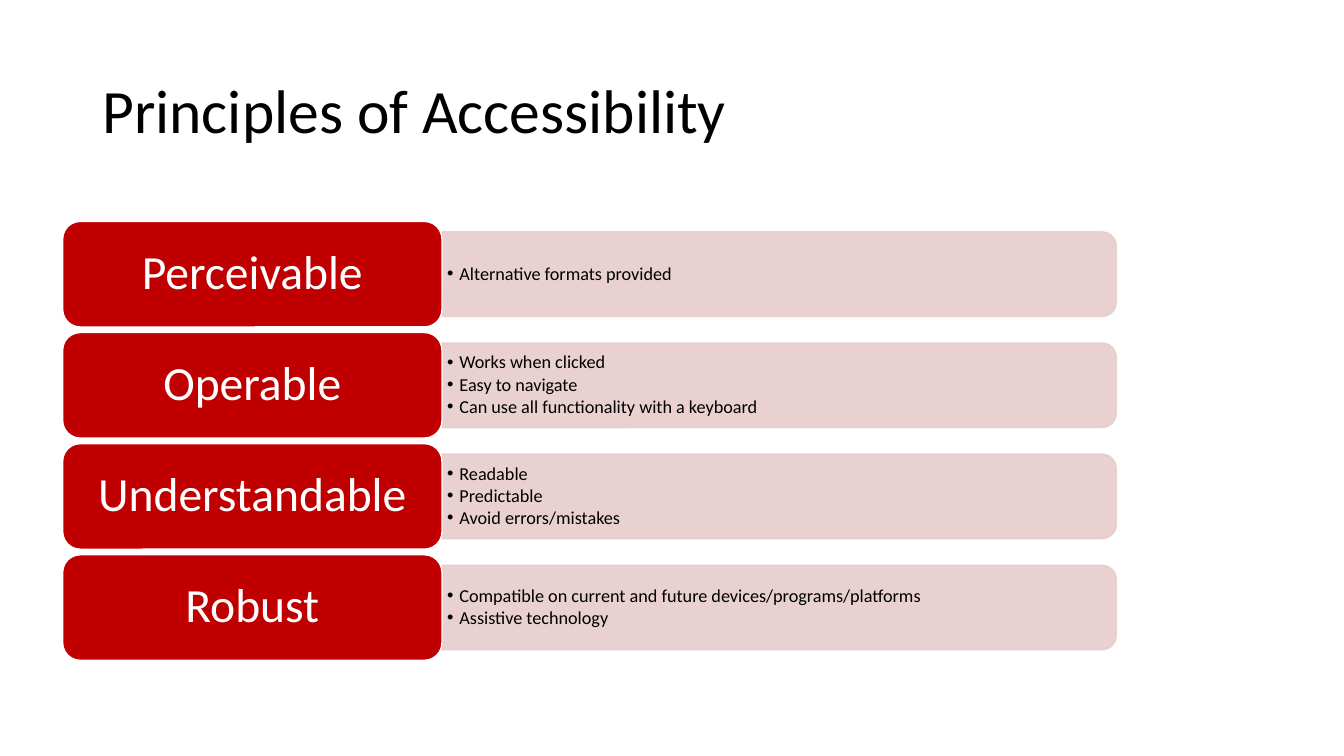
from pptx import Presentation
from pptx import util as u
from pptx.dml import color
from pptx.enum import shapes, text
from pptx.oxml import ns
from lxml import etree

HUES = {"red": "C00000", "pink": "E8CCCC", "white": "FFFFFF", "black": "000000"}
ROWS = [
    ("Perceivable", ["Alternative formats provided"]),
    ("Operable", ["Works when clicked", "Easy to navigate",
                  "Can use all functionality with a keyboard"]),
    ("Understandable", ["Readable", "Predictable", "Avoid errors/mistakes"]),
    ("Robust", ["Compatible on current and future devices/programs/platforms",
                "Assistive technology"]),
]


class Deck:
    """Hold the style and the current slide, and draw each kind of element."""

    font = "Calibri"

    def __init__(self, wide, high):
        self.pres = Presentation()
        self.pres.slide_width = u.Cm(wide)
        self.pres.slide_height = u.Cm(high)
        self.slide = self.pres.slides.add_slide(self.pres.slide_layouts[6])

    def tint(self, part, hue):
        part.solid()
        part.fore_color.rgb = color.RGBColor.from_string(HUES[hue])

    def fade(self, part, share):
        for hue in part.iter(ns.qn("a:srgbClr")):
            etree.SubElement(hue, ns.qn("a:alpha"), val=str(share * 1000))

    def fit(self, shape, lines, size, hue, inset, align=text.PP_ALIGN.LEFT, gap=0):
        frame = shape.text_frame
        frame.word_wrap = True
        frame.vertical_anchor = text.MSO_ANCHOR.MIDDLE
        frame.margin_left = frame.margin_right = u.Cm(inset[0])
        frame.margin_top = frame.margin_bottom = u.Cm(inset[1])
        frame.text = "\n".join(lines)
        for para in frame.paragraphs:
            para.alignment = align
            para.line_spacing = 0.9
            para.space_after = u.Pt(gap)
            for run in para.runs:
                run.font.name = self.font
                run.font.size = u.Pt(size)
                self.tint(run.font.fill, hue)

    def block(self, kind, box, fill, line):
        shape = self.slide.shapes.add_shape(kind, *map(u.Cm, box))
        shape.shadow.inherit = False
        self.tint(shape.fill, fill)
        self.tint(shape.line.fill, line)
        shape.line.width = u.Pt(1)
        return shape

    def label(self, box, lines, size, inset, gap=0):
        shape = self.slide.shapes.add_textbox(*map(u.Cm, box))
        self.fit(shape, lines, size, "black", inset, gap=gap)
        return shape

    def bar(self, left, mid, wide, high):
        box = (left + (wide - high) / 2, mid - wide / 2, high, wide)
        kind = shapes.MSO_SHAPE.ROUND_2_SAME_RECTANGLE
        shape = self.block(kind, box, "pink", "pink")
        shape.rotation = 90
        self.fade(shape.element.spPr, 90)

    def points(self, box, lines):
        shape = self.label(box, lines, 13, (0.13, 0.07), 1.8)
        for para in shape.text_frame.paragraphs:
            props = para._p.get_or_add_pPr()
            props.set("marL", str(u.Cm(0.31)))
            props.set("indent", str(u.Cm(-0.31)))
            etree.SubElement(props, ns.qn("a:buFont"), typeface="Arial")
            etree.SubElement(props, ns.qn("a:buChar"), char="•")

    def card(self, box, name):
        kind = shapes.MSO_SHAPE.ROUNDED_RECTANGLE
        shape = self.block(kind, box, "red", "white")
        self.fit(shape, [name], 34, "white", (0.49, 0.31), text.PP_ALIGN.CENTER)


def main():
    deck = Deck(33.87, 19.05)
    deck.label((2.33, 1.01, 29.21, 3.68), ["Principles of Accessibility"],
               44, (0.25, 0.13))
    left, top, wide, high, step = 1.58, 5.58, 9.56, 2.66, 2.8
    edge = left + wide
    for row, (name, lines) in enumerate(ROWS):
        head = top + row * step
        mid = head + high / 2
        deck.bar(edge, mid, 16.99, 2.13)
        deck.points((edge, mid - 0.96, 16.87, 1.92), lines)
        deck.card((left, head, wide, high), name)
    deck.pres.save("out.pptx")


if __name__ == "__main__":
    main()
